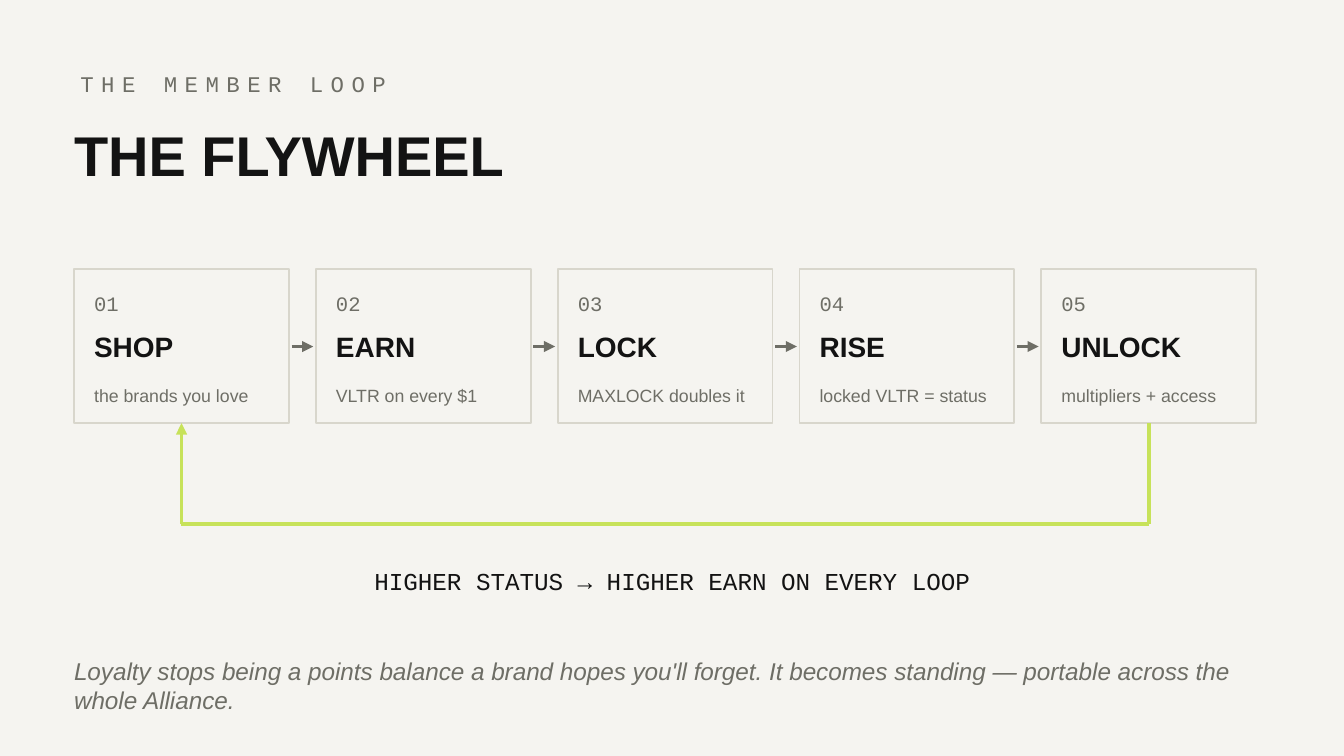
from lxml.etree import SubElement
from pptx import Presentation
from pptx.dml.color import RGBColor
from pptx.enum.shapes import MSO_CONNECTOR, MSO_SHAPE
from pptx.enum.text import MSO_ANCHOR, MSO_AUTO_SIZE, PP_ALIGN
from pptx.oxml.ns import qn
from pptx.util import Cm, Pt

COLORS = {
    "paper": "F5F4F0",
    "ink": "131313",
    "muted": "6E6E66",
    "border": "D8D6CC",
    "lime": "C7E25A",
}
SANS, MONO = "Arial", "Courier New"


def write_text(box, place, text, size, color, font=SANS, bold=False,
               italic=False, align=PP_ALIGN.LEFT):
    box.left, box.top, box.width, box.height = [Cm(length) for length in place]
    frame = box.text_frame
    frame.word_wrap = True
    frame.auto_size = MSO_AUTO_SIZE.NONE
    frame.vertical_anchor = MSO_ANCHOR.MIDDLE
    frame.margin_left = frame.margin_right = 0
    frame.margin_top = frame.margin_bottom = 0
    para = frame.paragraphs[0]
    para.alignment = align
    span = para.add_run()
    span.text = text
    span.font.name = font
    span.font.size = Pt(size)
    span.font.bold = bold
    span.font.italic = italic
    span.font.color.rgb = RGBColor.from_string(COLORS[color])
    return span


def draw_line(shapes, start, end, color, width, arrow=False):
    line = shapes.add_connector(
        MSO_CONNECTOR.STRAIGHT, *[Cm(length) for length in (*start, *end)])
    line.line.color.rgb = RGBColor.from_string(COLORS[color])
    line.line.width = Pt(width)
    if arrow:
        SubElement(line.line._get_or_add_ln(), qn("a:tailEnd"), type="triangle")
    SubElement(line._element.spPr, qn("a:effectLst"))


deck = Presentation()
deck.slide_width, deck.slide_height = Cm(25.4), Cm(14.29)
page = deck.slides.add_slide(deck.slide_layouts[5])
page.background.fill.solid()
page.background.fill.fore_color.rgb = RGBColor.from_string(COLORS["paper"])
shapes = page.shapes

# Heading
left, full_width = 1.4, 22.6
kicker = write_text(shapes.add_textbox(0, 0, 0, 0), (1.52, 1.14, 22.35, 0.89),
                    "THE MEMBER LOOP", 12, "muted", MONO)
kicker.font._element.set("spc", "400")
write_text(shapes.title, (left, 2.16, full_width, 1.52),
           "THE FLYWHEEL", 30, "ink", bold=True)

# Step cards, with an arrow from each to the next
steps = [
    ("SHOP", "the brands you love"),
    ("EARN", "VLTR on every $1"),
    ("LOCK", "MAXLOCK doubles it"),
    ("RISE", "locked VLTR = status"),
    ("UNLOCK", "multipliers + access"),
]
card_top, card_width, card_height, pitch = 5.08, 4.06, 2.92, 4.57
for index, (name, detail) in enumerate(steps):
    card_left = left + index * pitch
    card = shapes.add_shape(MSO_SHAPE.RECTANGLE, Cm(card_left), Cm(card_top),
                            Cm(card_width), Cm(card_height))
    card.shadow.inherit = False
    card.fill.solid()
    card.fill.fore_color.rgb = RGBColor.from_string(COLORS["paper"])
    card.line.color.rgb = RGBColor.from_string(COLORS["border"])
    card.line.width = Pt(1)

    text_left = card_left + 0.38
    write_text(shapes.add_textbox(0, 0, 0, 0), (text_left, 5.38, 2.03, 0.71),
               f"{index + 1:02}", 11, "muted", MONO)
    write_text(shapes.add_textbox(0, 0, 0, 0), (text_left, 6.15, 3.43, 0.81),
               name, 15, "ink", bold=True)
    write_text(shapes.add_textbox(0, 0, 0, 0), (text_left, 6.96, 3.43, 1.02),
               detail, 9.5, "muted")

    if index < len(steps) - 1:
        draw_line(shapes, (card_left + card_width + 0.05, 6.55),
                  (card_left + pitch - 0.05, 6.55), "muted", 1.5, arrow=True)

# Return loop from the last card to the first
first_center = left + card_width / 2
last_center = first_center + (len(steps) - 1) * pitch
card_bottom, loop_bottom = card_top + card_height, 9.91
draw_line(shapes, (last_center, card_bottom), (last_center, loop_bottom), "lime", 2)
draw_line(shapes, (first_center, loop_bottom), (last_center, loop_bottom), "lime", 2)
draw_line(shapes, (first_center, loop_bottom), (first_center, card_bottom),
          "lime", 2, arrow=True)

# Loop label and closing remark
write_text(shapes.add_textbox(0, 0, 0, 0), (left, 10.54, full_width, 0.89),
           "HIGHER STATUS → HIGHER EARN ON EVERY LOOP", 13, "ink", MONO,
           align=PP_ALIGN.CENTER)
write_text(shapes.add_textbox(0, 0, 0, 0), (left, 12.32, full_width, 1.27),
           "Loyalty stops being a points balance a brand hopes you'll forget. "
           "It becomes standing — portable across the whole Alliance.",
           13, "muted", italic=True)

deck.save("out.pptx")
